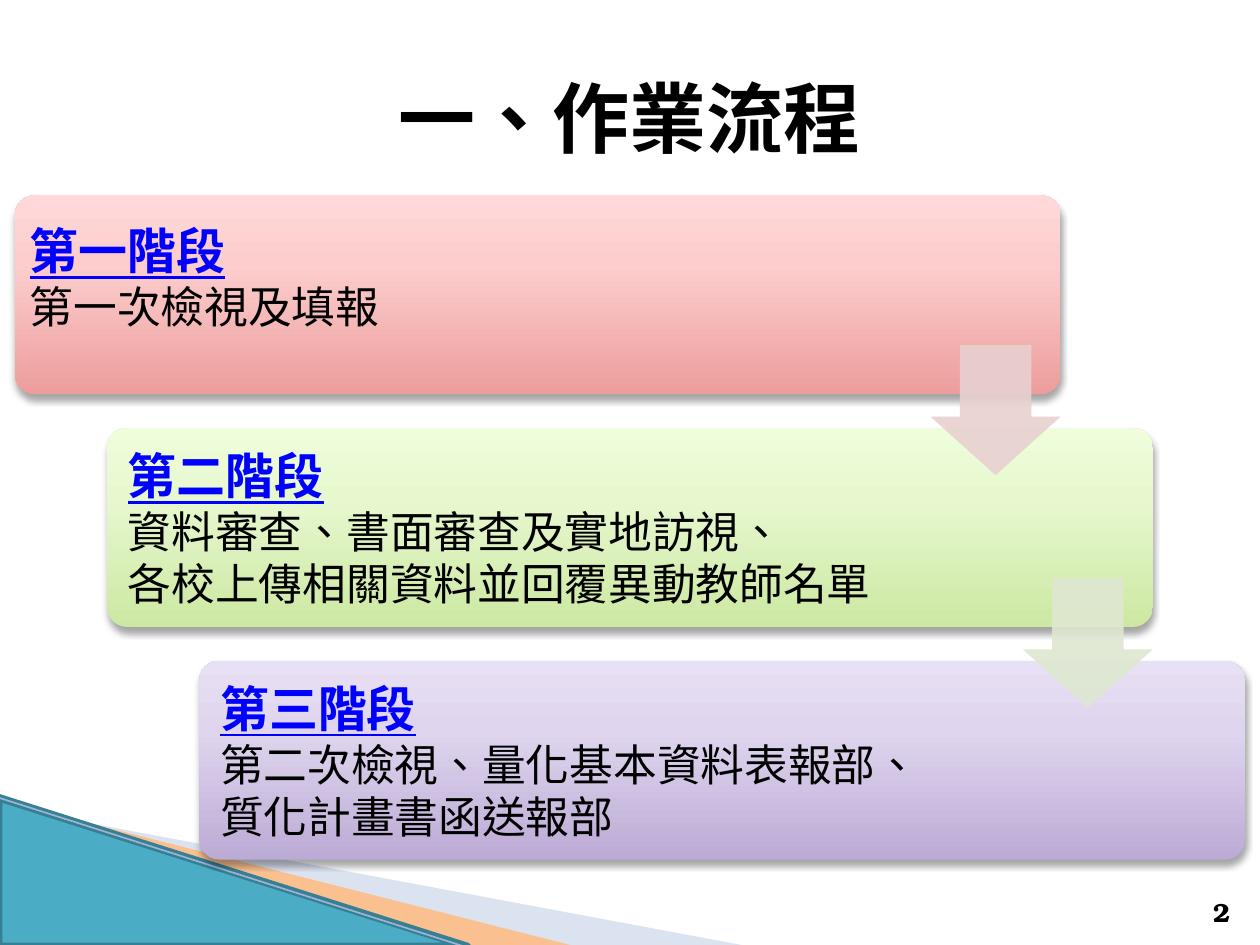
from dataclasses import dataclass

import lxml.etree
import pptx
import pptx.dml.color
import pptx.enum.dml
import pptx.enum.lang
import pptx.enum.shapes
import pptx.enum.text
import pptx.oxml.ns
import pptx.util

Cm = pptx.util.Cm
Pt = pptx.util.Pt
RGB = pptx.dml.color.RGBColor.from_string
qn = pptx.oxml.ns.qn
SHAPE = pptx.enum.shapes.MSO_SHAPE
ALIGN = pptx.enum.text.PP_ALIGN
ANCHOR = pptx.enum.text.MSO_ANCHOR


@dataclass(frozen=True)
class Theme:
    serif: str = "Times New Roman"
    book: str = "TeX Gyre Bonum"
    title_size: float = 44
    heading_size: float = 28
    body_size: float = 25
    number_size: float = 15
    ink: str = "000000"
    link: str = "0000FF"
    pale_wave: str = "A7B9DB"
    orange_wave: str = "FAC090"
    corner: str = "4BACC6"
    corner_edge: str = "377F92"
    corner_line: str = "9EB3D6"


THEME = Theme()


@dataclass(frozen=True)
class Span:
    text: str
    font: str = THEME.serif
    size: float = THEME.body_size
    color: str = THEME.ink
    bold: bool = False
    underline: bool = False


@dataclass(frozen=True)
class Stage:
    heading: str
    body: list[list[Span]]
    gradient: tuple[str, str, str]  # bottom, 65 % up, top
    arrow: str | None = None
    insets: tuple[float, float, float, float] = (0.3, 0.3, 0.3, 0.3)
    text_shift: float = 0.12


STAGES = [
    Stage("第一階段", [[Span("第一次檢視及填報")]],
          ("EC9E9D", "FBCDCC", "FFD9D9"), "E8D0D0", (0.2, 0, 0, 0.71), 0.1),
    Stage("第二階段",
          [[Span("資料審查、書面審查及"), Span("實地訪視、", THEME.book)],
           [Span("各校上傳相關資料並回覆異動教師名單", THEME.book)]],
          ("CCE8A2", "E7F8CF", "EFFDDB"), "DEE7D1"),
    Stage("第三階段",
          [[Span("第二次檢視、"), Span("量化基本資料表報部、", THEME.book)],
           [Span("質化計畫書函送報部", THEME.book)]],
          ("BCABD5", "DFD5EE", "E8E0F4")),
]
CARD_LEFT, CARD_TOP, CARD_WIDTH, CARD_HEIGHT = 0.3, 3.94, 21.08, 4.01
STEP_X, STEP_Y = 1.86, 4.69
ARROW_SIZE, ARROW_DROP = 2.62, 3.02


def add_text(slide, lines: list[list[Span]], left: float, top: float, width: float,
             height: float, *, align=ALIGN.LEFT, anchor=ANCHOR.MIDDLE,
             insets=(0.25, 0.13, 0.25, 0.13)) -> None:
    """Insets run left, top, right, bottom."""
    frame = slide.shapes.add_textbox(Cm(left), Cm(top), Cm(width), Cm(height)).text_frame
    frame.word_wrap = True
    frame.vertical_anchor = anchor
    (frame.margin_left, frame.margin_top,
     frame.margin_right, frame.margin_bottom) = map(Cm, insets)
    for index, line in enumerate(lines):
        paragraph = frame.add_paragraph() if index else frame.paragraphs[0]
        paragraph.alignment = align
        for span in line:
            run = paragraph.add_run()
            run.text = span.text
            run.font.name = span.font
            run.font.size = Pt(span.size)
            run.font.bold = span.bold
            run.font.underline = span.underline
            run.font.color.rgb = RGB(span.color)
            run.font.language_id = pptx.enum.lang.MSO_LANGUAGE_ID.TRADITIONAL_CHINESE


def add_color(parent, color: str, opacity: int = 100) -> None:
    node = lxml.etree.SubElement(parent, qn("a:srgbClr"), val=color)
    lxml.etree.SubElement(node, qn("a:alpha"), val=str(opacity * 1000))


def paint(shape, color: str, opacity: int = 100) -> None:
    shape.shadow.inherit = False
    shape.fill.solid()
    shape.fill.fore_color.rgb = RGB(color)
    shape.line.fill.background()
    solid = shape._element.spPr.find(qn("a:solidFill"))
    solid.remove(solid[0])
    add_color(solid, color, opacity)


def add_shape(slide, kind, left: float, top: float, width: float, height: float):
    return slide.shapes.add_shape(kind, Cm(left), Cm(top), Cm(width), Cm(height))


def add_wave(slide, points: list[tuple[float, float]], color: str, opacity: int = 100) -> None:
    corners = [(Cm(x), Cm(y)) for x, y in points]
    builder = slide.shapes.build_freeform(*corners[0])
    builder.add_line_segments(corners[1:])
    paint(builder.convert_to_shape(), color, opacity)


def add_corner(slide) -> None:
    add_wave(slide, [(1.4, 16.52), (15.11, 19.08), (11.58, 19.08)], THEME.pale_wave, 40)
    add_wave(slide, [(1.35, 16.48), (11.61, 19.08), (9.45, 19.1), (1.37, 16.51)],
             THEME.orange_wave)
    triangle = add_shape(slide, SHAPE.RIGHT_TRIANGLE, -0.03, 16.08, 9.45, 3)
    paint(triangle, THEME.corner)
    triangle.line.color.rgb = RGB(THEME.corner_edge)
    triangle.line.width = Pt(4.33)
    edge = slide.shapes.add_connector(pptx.enum.shapes.MSO_CONNECTOR.STRAIGHT,
                                      Cm(-0.03), Cm(16.08), Cm(9.42), Cm(19.1))
    edge.line.color.rgb = RGB(THEME.corner_line)
    edge.line.width = Pt(0.95)
    lxml.etree.SubElement(edge._element.spPr, qn("a:effectLst"))


def add_card(slide, stage: Stage, left: float, top: float) -> None:
    card = add_shape(slide, SHAPE.ROUNDED_RECTANGLE, left, top, CARD_WIDTH, CARD_HEIGHT)
    card.adjustments[0] = 0.1
    card.line.fill.background()
    card.fill.gradient()
    card.fill.gradient_angle = 90
    properties = card._element.spPr
    stops = properties.find(qn("a:gradFill")).find(qn("a:gsLst"))
    for stop in list(stops):
        stops.remove(stop)
    for position, color in zip((0, 65, 100), stage.gradient):
        add_color(lxml.etree.SubElement(stops, qn("a:gs"), pos=str(position * 1000)), color)
    card.shadow.inherit = False
    shadow = lxml.etree.SubElement(
        properties.find(qn("a:effectLst")), qn("a:outerShdw"), blurRad=str(Pt(4)),
        dist=str(Pt(3)), dir="5400000", rotWithShape="0")
    add_color(shadow, THEME.ink, 35)

    heading = Span(stage.heading, size=THEME.heading_size, color=THEME.link,
                   bold=True, underline=True)
    add_text(slide, [[heading], *stage.body], left + stage.text_shift,
             top + stage.text_shift, 16.5, 3.78, insets=stage.insets)


def add_arrow(slide, color: str, left: float, top: float) -> None:
    arrow = add_shape(slide, SHAPE.DOWN_ARROW, left, top, ARROW_SIZE, ARROW_SIZE)
    arrow.adjustments[0] = 0.55
    arrow.adjustments[1] = 0.45
    paint(arrow, color, 90)


def main() -> None:
    deck = pptx.Presentation()
    deck.slide_width, deck.slide_height = Cm(25.4), Cm(19.05)
    slide = deck.slides.add_slide(deck.slide_layouts[6])
    add_corner(slide)
    add_text(slide, [[Span("一、作業流程", size=THEME.title_size, bold=True)]],
             0, 0.76, 25.4, 3.18, align=ALIGN.CENTER)
    add_text(slide, [[Span("2", THEME.book, THEME.number_size, bold=True)]],
             23.5, 17.81, 1.55, 1.02, align=ALIGN.RIGHT, anchor=ANCHOR.BOTTOM)

    places = [(stage, CARD_LEFT + i * STEP_X, CARD_TOP + i * STEP_Y)
              for i, stage in enumerate(STAGES)]
    for stage, left, top in places:
        add_card(slide, stage, left, top)
    for stage, left, top in places:
        if stage.arrow:
            add_arrow(slide, stage.arrow, left + CARD_WIDTH - ARROW_SIZE, top + ARROW_DROP)
    deck.save("out.pptx")


if __name__ == "__main__":
    main()
